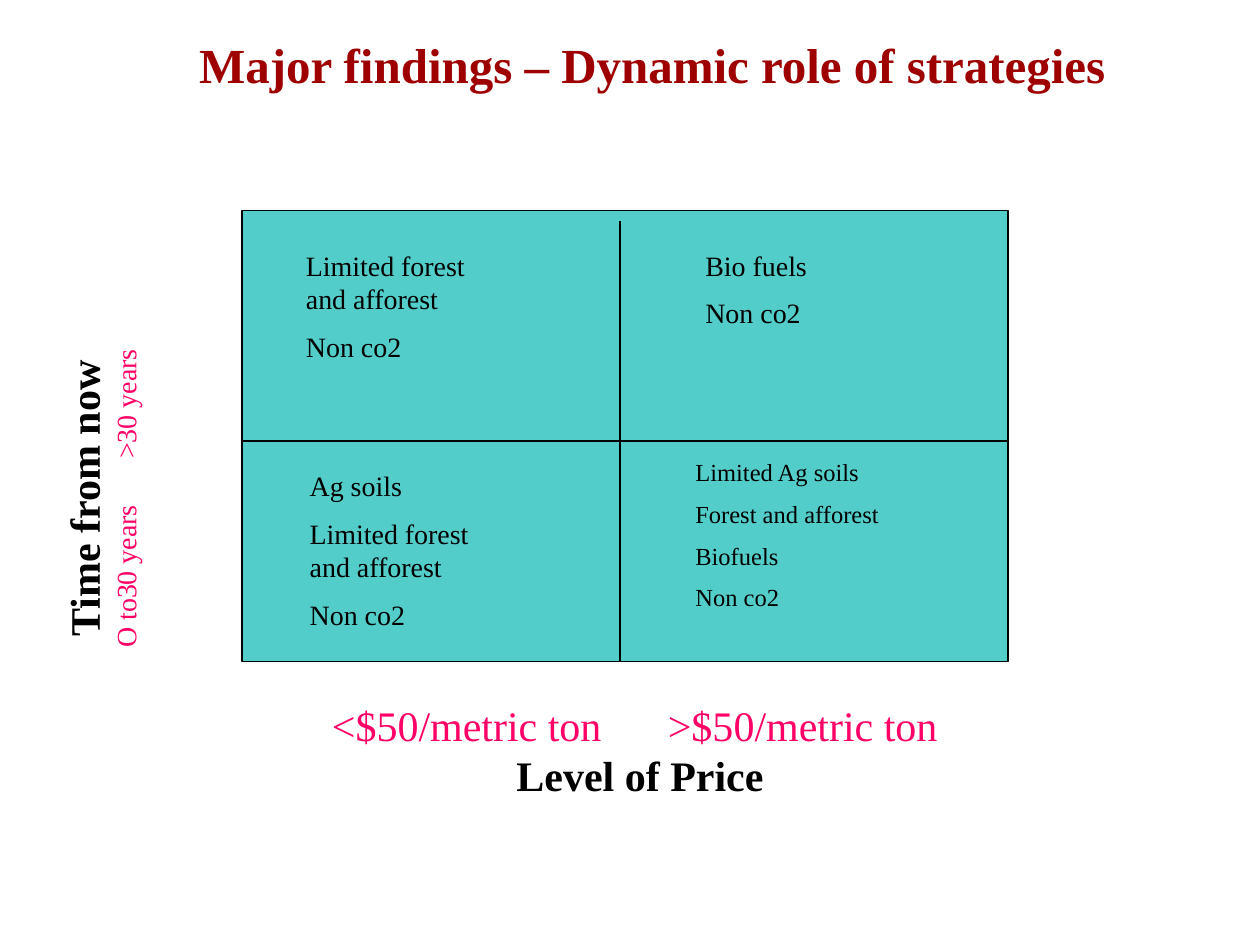
from lxml import etree
from pptx import Presentation
from pptx.dml.color import RGBColor
from pptx.enum.shapes import MSO_CONNECTOR, MSO_SHAPE
from pptx.enum.text import MSO_ANCHOR, MSO_AUTO_SIZE, PP_ALIGN
from pptx.oxml.ns import qn
from pptx.util import Inches, Pt

FONT = "Times New Roman"
BLACK = RGBColor(0x00, 0x00, 0x00)
DARK_RED = RGBColor(0x9E, 0x00, 0x00)
PINK = RGBColor(0xFF, 0x00, 0x66)
TEAL = RGBColor(0x53, 0xCD, 0xCA)


def style(para, size, color=BLACK, bold=False, align=PP_ALIGN.LEFT):
    para.alignment = align
    para.font.name = FONT
    para.font.size = Pt(size)
    para.font.bold = bold
    para.font.color.rgb = color


def add_text(left, top, width, height, lines):
    """Add a wrapping text box with one paragraph per line."""
    box = page.shapes.add_textbox(Inches(left), Inches(top), Inches(width), Inches(height))
    frame = box.text_frame
    frame.word_wrap = True
    frame.auto_size = MSO_AUTO_SIZE.SHAPE_TO_FIT_TEXT
    frame.text = "\n".join(lines)
    return box


deck = Presentation()
deck.slide_width, deck.slide_height = Inches(10), Inches(7.5)
page = deck.slides.add_slide(deck.slide_layouts[5])

title = page.shapes.title
title.left, title.top = Inches(1.45), Inches(0.22)
title.width, title.height = Inches(7.55), Inches(0.57)
title.text_frame.text = "Major findings – Dynamic role of strategies "
title.text_frame.word_wrap = False
title.text_frame.auto_size = MSO_AUTO_SIZE.SHAPE_TO_FIT_TEXT
title.text_frame.vertical_anchor = MSO_ANCHOR.TOP
style(title.text_frame.paragraphs[0], 28, DARK_RED, True, PP_ALIGN.CENTER)

# Price axis
price_axis = add_text(2.08, 5.5, 6, 0.91,
                      ["<$50/metric ton\t  >$50/metric ton ", "Level of Price"])
price_range, price_name = price_axis.text_frame.paragraphs
style(price_range, 24, PINK, align=PP_ALIGN.CENTER)
style(price_name, 24, bold=True, align=PP_ALIGN.CENTER)

# Matrix with its two dividers
matrix = page.shapes.add_shape(MSO_SHAPE.RECTANGLE, Inches(1.92), Inches(1.67),
                               Inches(6.08), Inches(3.58))
matrix.shadow.inherit = False
matrix.fill.solid()
matrix.fill.fore_color.rgb = TEAL
matrix.line.color.rgb = BLACK
matrix.line.width = Pt(0.75)

for x1, y1, x2, y2 in [(4.92, 1.75, 4.92, 5.25), (1.92, 3.5, 8, 3.5)]:
    divider = page.shapes.add_connector(MSO_CONNECTOR.STRAIGHT, Inches(x1), Inches(y1),
                                        Inches(x2), Inches(y2))
    divider.line.color.rgb = BLACK
    divider.line.width = Pt(0.75)
    etree.SubElement(divider.element.spPr, qn("a:effectLst"))

# Time axis, reading upwards
time_axis = add_text(0.41, 1.66, 0.88, 3.58,
                     ["Time from now", "O to30 years  \t>30 years"])
time_axis.rotation = 180
time_axis.element.txBody.find(qn("a:bodyPr")).set("vert", "eaVert")
time_name, time_range = time_axis.text_frame.paragraphs
style(time_name, 24, bold=True, align=PP_ALIGN.CENTER)
style(time_range, 16, PINK, align=PP_ALIGN.CENTER)

# Strategies in each quadrant: left, top, width, height, text size, lines
quadrants = [
    (2.36, 3.67, 1.73, 1.45, 16, ["Ag soils", "Limited forest and afforest", "Non co2"]),
    (2.33, 1.92, 1.73, 1.04, 16, ["Limited forest and afforest", "Non co2"]),
    (5.5, 1.92, 1.73, 0.77, 16, ["Bio fuels", "Non co2"]),
    (5.42, 3.58, 1.98, 1.4, 14,
     ["Limited Ag soils", "Forest and afforest", "Biofuels", "Non co2"]),
]
for left, top, width, height, size, strategies in quadrants:
    quadrant = add_text(left, top, width, height, strategies)
    for para in quadrant.text_frame.paragraphs:
        style(para, size)
        para.space_before = Pt(size / 2)

deck.save("out.pptx")
